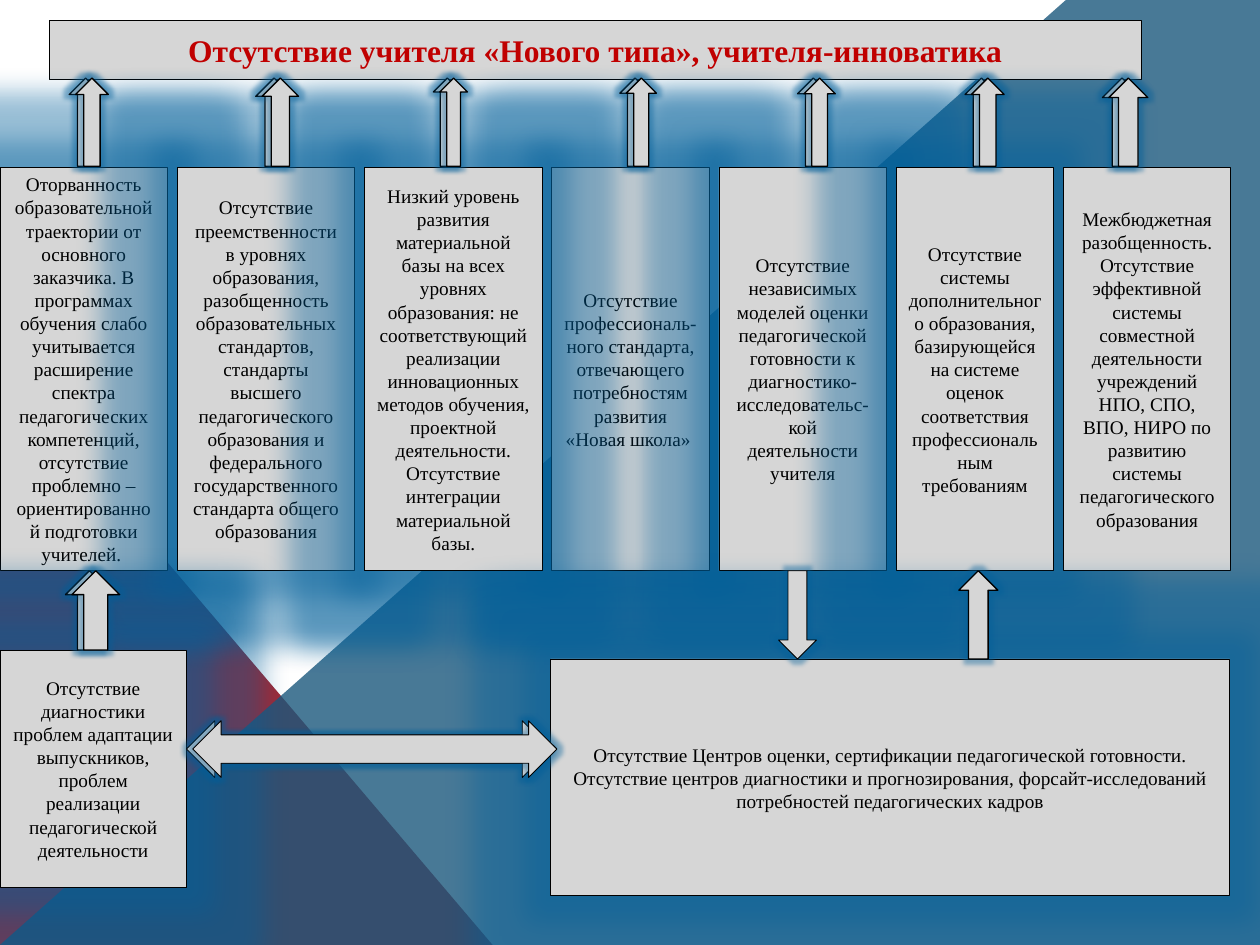
import pptx
import pptx.util
import pptx.oxml
import pptx.oxml.ns
from dataclasses import dataclass
from pptx.dml.color import RGBColor
from pptx.enum.shapes import MSO_SHAPE
from pptx.enum.text import MSO_ANCHOR, MSO_AUTO_SIZE, PP_ALIGN
from pptx.util import Inches


@dataclass
class Theme:
    font: str = "Times New Roman"
    body: int = 11
    head: int = 18
    grey: str = "D6D6D6"
    ink: str = "000000"
    title: str = "C00000"
    red: str = "9F2936"
    blue: str = "1B587C"
    glow: str = "005F9A"


class Board:
    def __init__(self, slide, theme):
        self.slide = slide
        self.shapes = slide.shapes
        self.theme = theme

    def paint(self, shape, fill, line=None):
        shape.fill.solid()
        shape.fill.fore_color.rgb = RGBColor.from_string(fill)
        if line:
            shape.line.color.rgb = RGBColor.from_string(self.theme.ink)
            shape.line.width = pptx.util.Pt(line)
        else:
            shape.line.fill.background()

    def plain(self, kind, x, y, w, h, fill, line=None):
        shape = self.shapes.add_shape(kind, Inches(x), Inches(y), Inches(w), Inches(h))
        shape.shadow.inherit = False
        self.paint(shape, fill, line)
        return shape

    def glow(self, shape, size):
        root = shape.element.spPr.find(pptx.oxml.ns.qn("a:effectLst"))
        root.append(pptx.oxml.parse_xml(
            f'<a:glow {pptx.oxml.ns.nsdecls("a")} rad="{pptx.util.Pt(size)}">'
            f'<a:srgbClr val="{self.theme.glow}"><a:alpha val="40000"/></a:srgbClr></a:glow>'))

    def label(self, shape, text, size, color, bold=False):
        frame = shape.text_frame
        frame.text = text
        frame.word_wrap = True
        frame.auto_size = MSO_AUTO_SIZE.NONE
        frame.vertical_anchor = MSO_ANCHOR.MIDDLE
        for par in frame.paragraphs:
            par.alignment = PP_ALIGN.CENTER
            par.font.name = self.theme.font
            par.font.size = pptx.util.Pt(size)
            par.font.bold = bold
            par.font.color.rgb = RGBColor.from_string(color)

    def back(self):
        self.plain(MSO_SHAPE.RIGHT_TRIANGLE, 0, 2.9, 3.91, 4.6, self.theme.red)
        form = self.shapes.build_freeform(0, Inches(7.5))
        ends = [(8.46, 0), (10, 0), (10, 7.5)]
        form.add_line_segments([(Inches(x), Inches(y)) for x, y in ends])
        shape = form.convert_to_shape()
        shape.shadow.inherit = False
        self.paint(shape, self.theme.blue)
        tint = shape.element.spPr.find(".//" + pptx.oxml.ns.qn("a:srgbClr"))
        tint.append(pptx.oxml.parse_xml(
            f'<a:alpha {pptx.oxml.ns.nsdecls("a")} val="80000"/>'))

    def title(self, text, x, y, w, h):
        shape = self.shapes.title
        shape.left, shape.top, shape.width, shape.height = map(Inches, (x, y, w, h))
        self.paint(shape, self.theme.grey, 0.5)
        self.label(shape, text, self.theme.head, self.theme.title, True)
        self.shapes.element.append(shape.element)

    def box(self, text, x, y, w, h, glow=True):
        shape = self.plain(MSO_SHAPE.RECTANGLE, x, y, w, h, self.theme.grey, 0.5)
        if glow:
            self.glow(shape, 30)
        self.label(shape, text, self.theme.body, self.theme.ink)

    def arrow(self, kind, x, y, w, h, line=0.75):
        self.glow(self.plain(kind, x, y, w, h, self.theme.grey, line), 5)


TITLE = "Отсутствие учителя «Нового типа», учителя-инноватика"
CAUSES = [
    (1.33, "Оторванность образовательной траектории от основного заказчика. В программах "
     "обучения слабо учитывается расширение спектра педагогических компетенций, "
     "отсутствие проблемно – ориентированной подготовки учителей. "),
    (1.41, "Отсутствие преемственности в уровнях образования, разобщенность "
     "образовательных стандартов, стандарты высшего педагогического образования и "
     "федерального государственного стандарта общего образования"),
    (1.41, "Низкий уровень развития материальной базы на всех уровнях образования: не "
     "соответствующий реализации инновационных методов обучения, проектной "
     "деятельности. Отсутствие интеграции материальной базы."),
    (1.25, "Отсутствие профессиональ-\nного стандарта, отвечающего потребностям "
     "развития «Новая школа» "),
    (1.33, "Отсутствие независимых моделей оценки педагогической готовности к "
     "диагностико- исследовательс-\nкой деятельности учителя"),
    (1.25, "Отсутствие системы дополнительного образования, базирующейся на системе "
     "оценок соответствия профессиональным требованиям"),
    (1.33, "Межбюджетная разобщенность. Отсутствие эффективной системы совместной "
     "деятельности учреждений НПО, СПО, ВПО, НИРО по развитию системы "
     "педагогического образования"),
]
LEFT = ("Отсутствие диагностики проблем адаптации выпускников, проблем реализации "
        "педагогической деятельности")
RIGHT = ("Отсутствие Центров оценки, сертификации педагогической готовности. Отсутствие "
         "центров диагностики и прогнозирования, форсайт-исследований потребностей "
         "педагогических кадров")
ORDER = [0, 1, 3, 4, 5, 2, 6]
RISES = [(0.55, 0.26), (6.33, 0.25), (4.92, 0.24), (3.44, 0.22),
         (2.03, 0.29), (8.75, 0.31), (7.66, 0.26)]
SHIFT = 0.05


def main():
    deck = pptx.Presentation()
    deck.slide_width, deck.slide_height = Inches(10), Inches(7.5)
    board = Board(deck.slides.add_slide(deck.slide_layouts[5]), Theme())
    board.back()
    board.title(TITLE, 0.39, 0.16, 8.67, 0.47)

    wide = [w for w, text in CAUSES]
    gap = (9.77 - sum(wide)) / (len(wide) - 1)
    for i in ORDER:
        w, text = CAUSES[i]
        board.box(text, sum(wide[:i]) + i * gap, 1.33, w, 3.2, glow=i < 6)
    board.box(LEFT, 0, 5.16, 1.48, 1.88)
    board.box(RIGHT, 4.37, 5.23, 5.39, 1.88)

    board.arrow(MSO_SHAPE.UP_ARROW, 7.61, 4.53, 0.31, 0.7)
    board.arrow(MSO_SHAPE.DOWN_ARROW, 6.18, 4.53, 0.3, 0.7, 0.5)
    for step in (0, SHIFT):
        for x, w in RISES:
            board.arrow(MSO_SHAPE.UP_ARROW, x + step, 0.62, w, 0.7)
        board.arrow(MSO_SHAPE.UP_ARROW, 0.52 + step, 4.53, 0.38, 0.63)
        board.arrow(MSO_SHAPE.LEFT_RIGHT_ARROW, 1.48 + step, 5.72, 2.89, 0.45, 0.5)
    deck.save("out.pptx")


if __name__ == "__main__":
    main()
